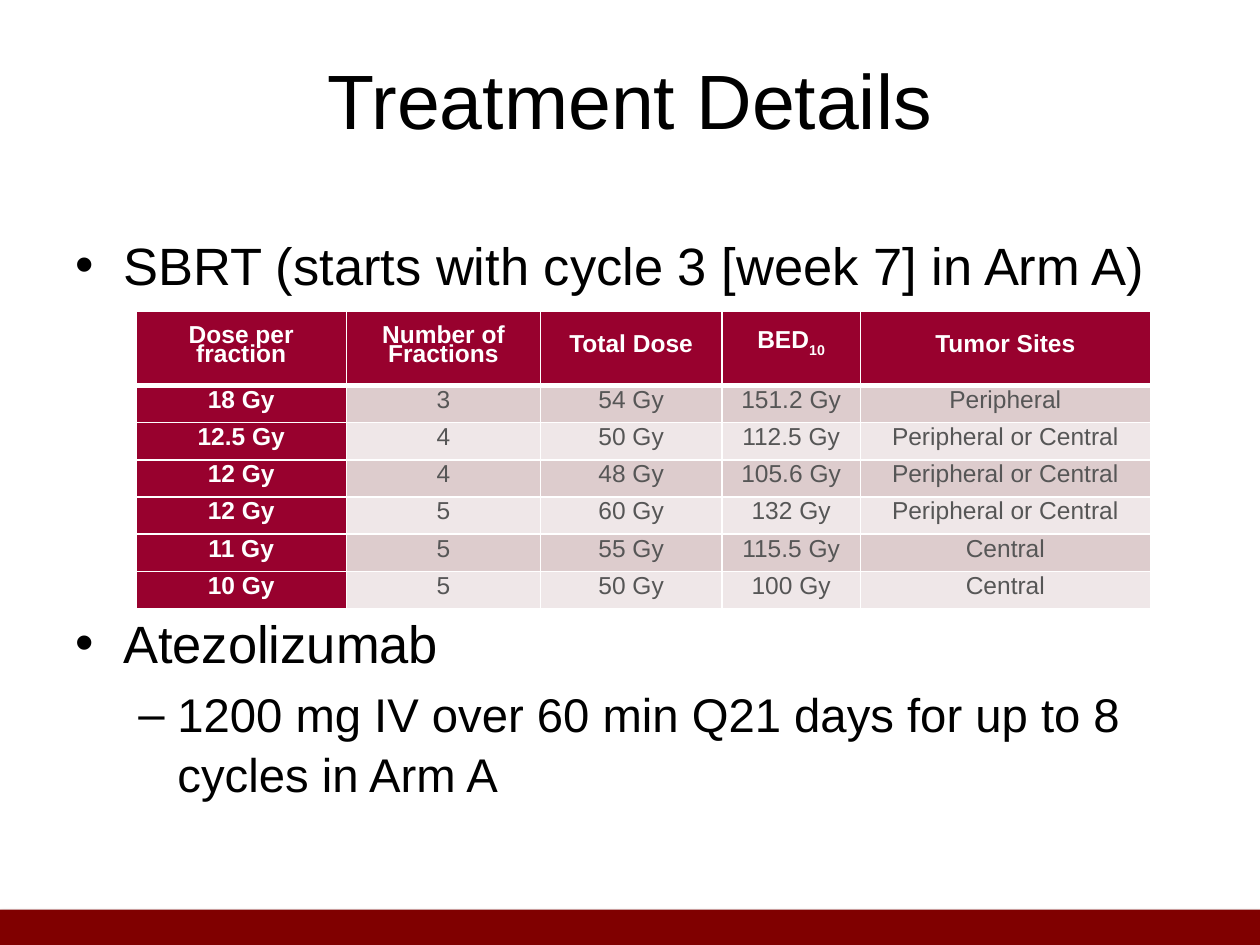
from dataclasses import dataclass

from lxml.etree import SubElement
from pptx import Presentation
from pptx.dml.color import RGBColor
from pptx.enum.shapes import MSO_SHAPE as Shape
from pptx.enum.text import MSO_ANCHOR as Anchor, PP_ALIGN as Align
from pptx.oxml.ns import qn
from pptx.util import Inches, Pt

BLACK = RGBColor(0x00, 0x00, 0x00)
WHITE = RGBColor(0xFF, 0xFF, 0xFF)
GREY = RGBColor(0x56, 0x56, 0x56)
MAROON = RGBColor(0x80, 0x00, 0x00)
WINE = RGBColor(0x98, 0x01, 0x2E)
BANDS = RGBColor(0xDD, 0xCC, 0xCD), RGBColor(0xEF, 0xE7, 0xE8)
NO_STYLE = "{2D5ABB26-0587-4C30-8999-92F81FD0307C}"


@dataclass
class Item:
    text: str
    size: float
    mark: str
    left: float
    hang: float
    before: float = 0
    level: int = 0
    lines: float = 1


ITEMS = [
    Item("SBRT (starts with cycle 3 [week 7] in Arm A)", 30, "•", 0.38, 0.38),
    Item("Atezolizumab", 30, "•", 0.38, 0.38, before=180),
    Item("1200 mg IV over 60 min Q21 days for up to 8 cycles in Arm A",
         27, "–", 0.81, 0.31, before=5, level=1, lines=1.05),
]
HEAD = ["Dose per fraction", "Number of Fractions", "Total Dose", "BED", "Tumor Sites"]
DOSES = [
    ["18 Gy", "3", "54 Gy", "151.2 Gy", "Peripheral"],
    ["12.5 Gy", "4", "50 Gy", "112.5 Gy", "Peripheral or Central"],
    ["12 Gy", "4", "48 Gy", "105.6 Gy", "Peripheral or Central"],
    ["12 Gy", "5", "60 Gy", "132 Gy", "Peripheral or Central"],
    ["11 Gy", "5", "55 Gy", "115.5 Gy", "Central"],
    ["10 Gy", "5", "50 Gy", "100 Gy", "Central"],
]
WIDTHS = [1.67, 1.54, 1.44, 1.1, 2.3]
HEAD_H = 0.59
ROW_H = HEAD_H / 2


def style(font, size: float, color: RGBColor, bold: bool = False) -> None:
    font.name, font.size, font.bold = "Arial", Pt(size), bold
    font.color.rgb = color


def add_bar(slide) -> None:
    bar = slide.shapes.add_shape(
        Shape.RECTANGLE, Inches(0), Inches(7.22), Inches(10), Inches(0.28))
    bar.fill.solid()
    bar.fill.fore_color.rgb = MAROON
    bar.line.fill.background()
    bar.shadow.inherit = False
    effects = bar.element.spPr.find(qn("a:effectLst"))
    shade = SubElement(effects, qn("a:outerShdw"), blurRad=str(Pt(3.1)),
                       dist=str(Pt(1.8)), dir="5400000", rotWithShape="0")
    tint = SubElement(shade, qn("a:srgbClr"), val="000000")
    SubElement(tint, qn("a:alpha"), val="35000")


def add_box(slide, left: float, top: float, width: float, height: float, inset: float):
    box = slide.shapes.add_textbox(
        Inches(left), Inches(top), Inches(width), Inches(height))
    frame = box.text_frame
    frame.word_wrap = True
    frame.margin_top = Inches(inset)
    return frame


def add_title(slide) -> None:
    para = add_box(slide, 0.5, 0.3, 9, 1.25, 0.12).paragraphs[0]
    para.text = "Treatment Details"
    para.alignment = Align.CENTER
    style(para.font, 44, BLACK)


def add_list(slide) -> None:
    frame = add_box(slide, 0.5, 1.75, 9.27, 4.95, 0.1)
    for i, item in enumerate(ITEMS):
        para = frame.add_paragraph() if i else frame.paragraphs[0]
        para.text = item.text
        para.level = item.level
        para.line_spacing = item.lines
        para.space_before = Pt(item.before)
        props = para._p.get_or_add_pPr()
        props.set("marL", str(Inches(item.left)))
        props.set("indent", str(-Inches(item.hang)))
        SubElement(props, qn("a:buFont"), typeface="Arial")
        SubElement(props, qn("a:buChar"), char=item.mark)
        style(para.font, item.size, BLACK)


def add_edges(cell, low: float) -> None:
    """Draw white borders, with the bottom one `low` points wide."""
    props = cell._tc.get_or_add_tcPr()
    sides = {"a:lnL": 1, "a:lnR": 1, "a:lnT": 1, "a:lnB": low}
    for at, (tag, width) in enumerate(sides.items()):
        line = SubElement(props, qn(tag), w=str(Pt(width)))
        fill = SubElement(line, qn("a:solidFill"))
        SubElement(fill, qn("a:srgbClr"), val=str(WHITE))
        props.insert(at, line)


def fill_cell(cell, text: str, row: int, col: int) -> None:
    strong = row == 0 or col == 0
    cell.fill.solid()
    cell.fill.fore_color.rgb = WINE if strong else BANDS[(row - 1) % 2]
    cell.vertical_anchor = Anchor.MIDDLE
    cell.margin_left = cell.margin_right = Inches(0.07)
    cell.margin_top = cell.margin_bottom = 0
    para = cell.text_frame.paragraphs[0]
    para.text = text
    para.alignment = Align.CENTER
    para.line_spacing = Pt(11)
    style(para.font, 14, WHITE if strong else GREY, strong)
    add_edges(cell, 1 if row else 3)


def add_doses(slide) -> None:
    rows = [HEAD, *DOSES]
    table = slide.shapes.add_table(
        len(rows), len(HEAD), Inches(1.08), Inches(2.47),
        Inches(sum(WIDTHS)), Inches(HEAD_H + ROW_H * len(DOSES))).table
    table._tbl.tblPr.find(qn("a:tableStyleId")).text = NO_STYLE
    for col, width in enumerate(WIDTHS):
        table.columns[col].width = Inches(width)
    for r, row in enumerate(rows):
        table.rows[r].height = Inches(ROW_H if r else HEAD_H)
        for c, text in enumerate(row):
            fill_cell(table.cell(r, c), text, r, c)
    sub = table.cell(0, HEAD.index("BED")).text_frame.paragraphs[0].add_run()
    sub.text = "10"
    sub._r.get_or_add_rPr().set("baseline", "-25000")


def main() -> None:
    deck = Presentation()
    deck.slide_width, deck.slide_height = Inches(10), Inches(7.5)
    slide = deck.slides.add_slide(deck.slide_layouts[6])
    add_bar(slide)
    add_title(slide)
    add_list(slide)
    add_doses(slide)
    deck.save("out.pptx")


if __name__ == "__main__":
    main()
